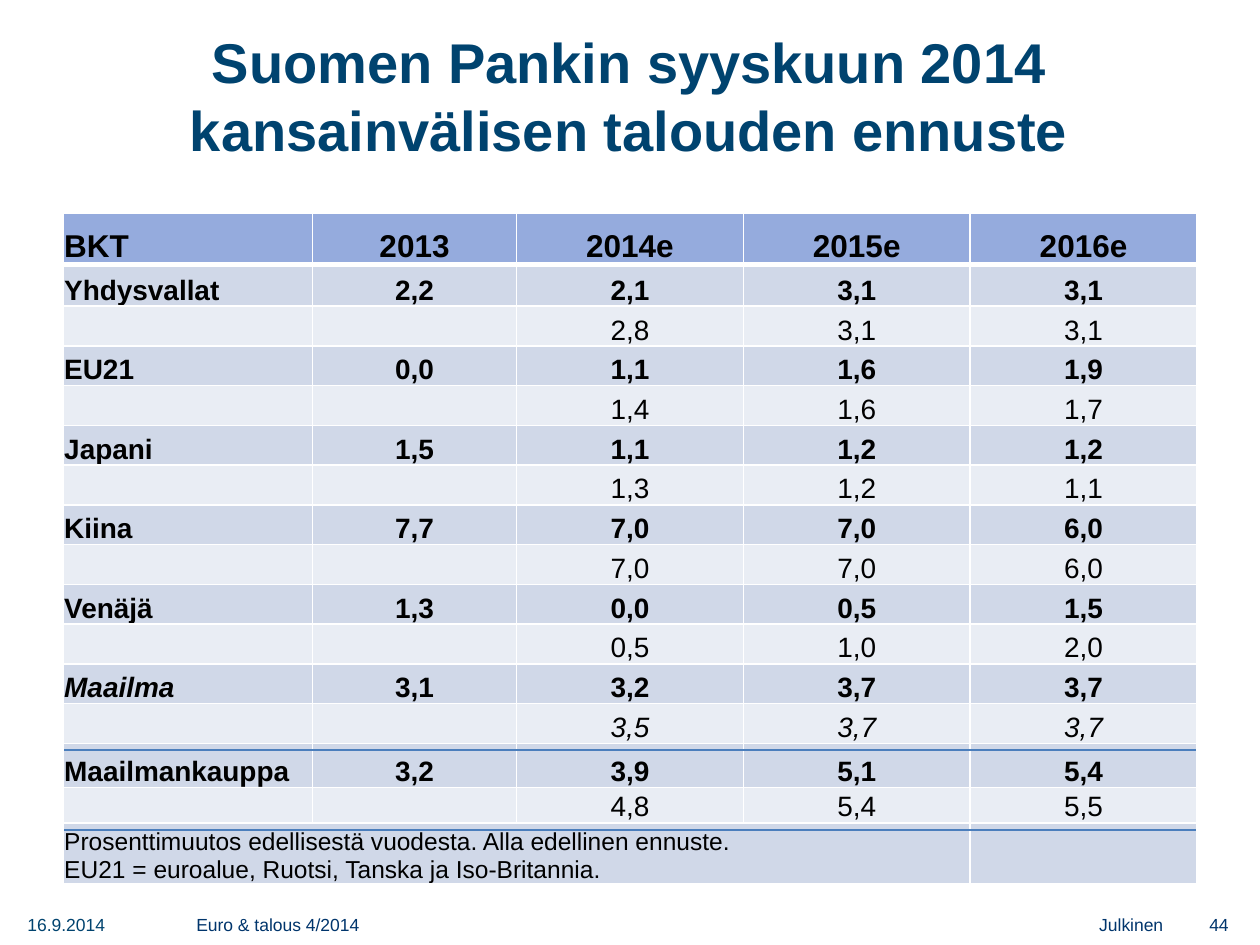
from lxml.etree import SubElement
from pptx import Presentation
from pptx.dml.color import RGBColor
from pptx.enum.shapes import MSO_CONNECTOR
from pptx.enum.text import MSO_ANCHOR, MSO_AUTO_SIZE, PP_ALIGN
from pptx.oxml import parse_xml
from pptx.oxml.ns import nsdecls, qn
from pptx.util import Inches, Pt

# Content
TITLE = "Suomen Pankin syyskuun 2014 kansainvälisen talouden ennuste"
HEADER = ["BKT", "2013", "2014e", "2015e", "2016e"]
# Area, 2013 outcome, current forecast, previous forecast
FORECASTS = [
    ("Yhdysvallat", "2,2", ["2,1", "3,1", "3,1"], ["2,8", "3,1", "3,1"]),
    ("EU21", "0,0", ["1,1", "1,6", "1,9"], ["1,4", "1,6", "1,7"]),
    ("Japani", "1,5", ["1,1", "1,2", "1,2"], ["1,3", "1,2", "1,1"]),
    ("Kiina", "7,7", ["7,0", "7,0", "6,0"], ["7,0", "7,0", "6,0"]),
    ("Venäjä", "1,3", ["0,0", "0,5", "1,5"], ["0,5", "1,0", "2,0"]),
    ("Maailma", "3,1", ["3,2", "3,7", "3,7"], ["3,5", "3,7", "3,7"]),
    ("Maailmankauppa", "3,2", ["3,9", "5,1", "5,4"], ["4,8", "5,4", "5,5"]),
]
ITALIC_AREA = "Maailma"
NOTE = ("Prosenttimuutos edellisestä vuodesta. Alla edellinen ennuste.\n"
        "EU21 = euroalue, Ruotsi, Tanska ja Iso-Britannia.")
# Text, left, width, colour, alignment
FOOTERS = [
    ("16.9.2014", 0.12, 1.26, "00436F", PP_ALIGN.LEFT),
    ("Euro & talous 4/2014", 1.46, 2.05, "00356C", PP_ALIGN.LEFT),
    ("Julkinen", 6.97, 2.36, "00356C", PP_ALIGN.RIGHT),
    ("44", 8.78, 1.07, "00356C", PP_ALIGN.RIGHT),
]

# Layout in inches
TABLE_LEFT, TABLE_TOP, TABLE_WIDTH = 0.5, 1.69, 9
COLUMNS = [1.98, 1.62] + [1.8] * 3
MIDDLE_ROWS = 11
ROWS = [0.41, 0.33] + [3.47 / MIDDLE_ROWS] * MIDDLE_ROWS + [0.35, 0.28, 0.48]
RULE_HEIGHTS = [5.95, 6.59]
HEADER_FILL, BAND_FILLS = "95ABDD", ["E9EDF4", "D0D8E8"]


def rgb(color):
    return RGBColor.from_string(color)


def write(frame, text, size, color="000000", bold=False, italic=False,
          align=PP_ALIGN.LEFT):
    frame.word_wrap = True
    frame.text = text
    for paragraph in frame.paragraphs:
        paragraph.alignment = align
        for run in paragraph.runs:
            font = run.font
            font.name, font.size = "Arial", Pt(size)
            font.bold, font.italic = bold, italic
            font.color.rgb = rgb(color)
        if not text:  # keeps an empty cell from stretching its row
            SubElement(paragraph._p, qn("a:endParaRPr"), sz=str(size * 100))


def format_cell(cell, fill, bottom_width=1):
    cell.vertical_anchor = MSO_ANCHOR.BOTTOM
    cell.margin_left = cell.margin_right = cell.margin_top = Inches(0.01)
    cell.margin_bottom = 0
    cell.fill.solid()
    cell.fill.fore_color.rgb = rgb(fill)
    properties = cell._tc.get_or_add_tcPr()
    for index, side in enumerate("LRTB"):
        width = Pt(bottom_width if side == "B" else 1)
        properties.insert(index, parse_xml(
            f'<a:ln{side} {nsdecls("a")} w="{width}"><a:solidFill>'
            f'<a:srgbClr val="FFFFFF"/></a:solidFill></a:ln{side}>'))


def table_rows():
    """Yield the values and text format of each row."""
    yield HEADER, dict(size=18, bold=True)
    for area, outcome, current, previous in FORECASTS:
        yield [area, outcome, *current], dict(size=16, bold=True)
        yield ["", "", *previous], dict(size=16, italic=area == ITALIC_AREA)
    yield [NOTE, "", "", "", ""], dict(size=14)


def add_forecast_table(slide):
    table = slide.shapes.add_table(
        len(ROWS), len(COLUMNS), Inches(TABLE_LEFT), Inches(TABLE_TOP),
        Inches(TABLE_WIDTH), Inches(sum(ROWS))).table
    for column, width in zip(table.columns, COLUMNS):
        column.width = Inches(width)
    for row, height in zip(table.rows, ROWS):
        row.height = Inches(height)
    for r, (values, style) in enumerate(table_rows()):
        fill = BAND_FILLS[r % 2] if r else HEADER_FILL
        for c, value in enumerate(values):
            cell = table.cell(r, c)
            format_cell(cell, fill, bottom_width=1 if r else 3)
            cell_style = dict(style)
            if value == ITALIC_AREA:
                cell_style["italic"] = True
            write(cell.text_frame, value, **cell_style,
                  align=PP_ALIGN.CENTER if c else PP_ALIGN.LEFT)
    last = len(ROWS) - 1
    table.cell(last, 0).merge(table.cell(last, 3))


def add_rule(slide, y):
    rule = slide.shapes.add_connector(
        MSO_CONNECTOR.STRAIGHT, Inches(0.51), Inches(y), Inches(9.49), Inches(y))
    rule.line.color.rgb = rgb("4B7EBC")
    rule.line.width = Pt(1.25)
    SubElement(rule._element.spPr, qn("a:effectLst"))


def main():
    deck = Presentation()
    deck.slide_width, deck.slide_height = Inches(10), Inches(7.5)
    slide = deck.slides.add_slide(deck.slide_layouts[5])

    # Title
    title = slide.shapes.title
    title.left, title.top = Inches(0.58), Inches(0.13)
    title.width, title.height = Inches(8.83), Inches(1.25)
    write(title.text_frame, TITLE, 32, color="00436F", bold=True,
          align=PP_ALIGN.CENTER)
    title.text_frame.vertical_anchor = MSO_ANCHOR.MIDDLE
    title.text_frame.auto_size = MSO_AUTO_SIZE.NONE

    add_forecast_table(slide)

    # Footer line
    for text, left, width, color, align in FOOTERS:
        footer = slide.shapes.add_textbox(
            Inches(left), Inches(7.16), Inches(width), Inches(0.36))
        write(footer.text_frame, text, 10, color=color, align=align)
        footer.text_frame.vertical_anchor = MSO_ANCHOR.MIDDLE

    # Rules around world trade
    for y in RULE_HEIGHTS:
        add_rule(slide, y)

    deck.save("out.pptx")


if __name__ == "__main__":
    main()
